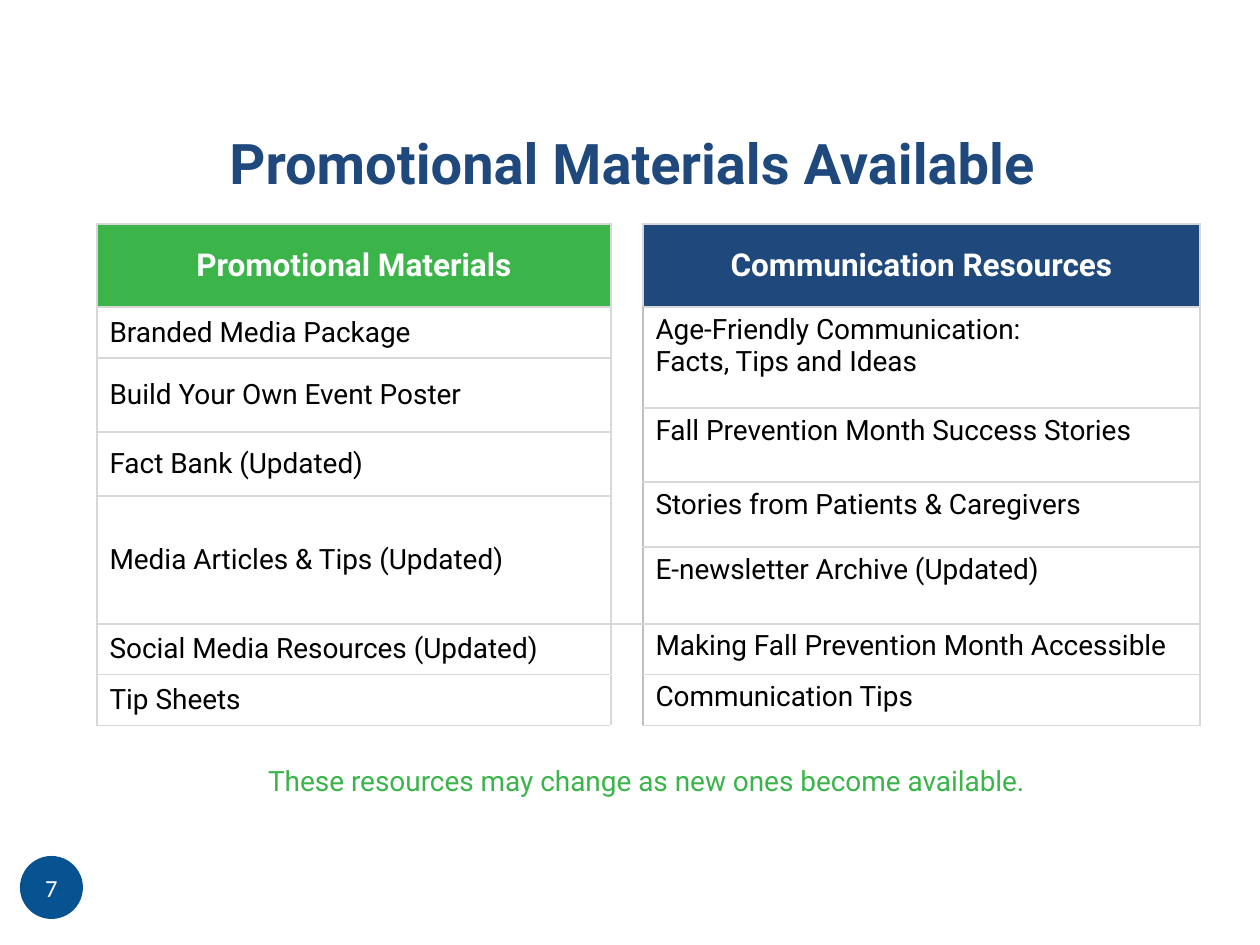
import pptx
import pptx.util
import pptx.dml.color
import pptx.enum.shapes
import pptx.enum.text
import pptx.oxml
import pptx.oxml.ns
from dataclasses import dataclass

ALIGN = pptx.enum.text.PP_ALIGN
ANCHOR = pptx.enum.text.MSO_ANCHOR
SHAPE = pptx.enum.shapes.MSO_SHAPE


@dataclass(frozen=True)
class Theme:
    font: str = "Roboto"
    num_font: str = "Calibri"
    navy: str = "1F497D"
    green: str = "3BB44A"
    badge: str = "075290"
    white: str = "FFFFFF"
    black: str = "000000"
    line: str = "D8D8D8"
    edge: str = "BFBFBF"
    title: int = 32
    head: int = 18
    body: int = 16
    num: int = 14


T = Theme()

# Column widths and row heights of the table
COLS = [514, 32, 557]
ROWS = [83, 51, 50, 24, 50, 14, 51, 77, 50, 51]

# Body cells: first row, rows spanned, lines of text
LEFT = [
    (1, 1, ["Branded Media Package"]),
    (2, 2, ["Build Your Own Event Poster"]),
    (4, 2, ["Fact Bank (Updated)"]),
    (6, 2, ["Media Articles & Tips (Updated)"]),
    (8, 1, ["Social Media Resources (Updated)"]),
    (9, 1, ["Tip Sheets"]),
]
RIGHT = [
    (1, 2, ["Age-Friendly Communication:", "Facts, Tips and Ideas"]),
    (3, 2, ["Fall Prevention Month Success Stories"]),
    (5, 2, ["Stories from Patients & Caregivers"]),
    (7, 1, ["E-newsletter Archive (Updated)"]),
    (8, 1, ["Making Fall Prevention Month Accessible"]),
    (9, 1, ["Communication Tips"]),
]


def px(n):
    return pptx.util.Emu(round(n * 914400 / 126))


def rgb(code):
    return pptx.dml.color.RGBColor.from_string(code)


def paint(fill, color):
    if color:
        fill.solid()
        fill.fore_color.rgb = rgb(color)
    else:
        fill.background()


def write(frame, lines, size, color, bold=False, align=ALIGN.LEFT, font=T.font):
    for i, line in enumerate(lines):
        para = frame.add_paragraph() if i else frame.paragraphs[0]
        para.alignment = align
        run = para.add_run()
        run.text = line
        run.font.name = font
        run.font.size = pptx.util.Pt(size)
        run.font.bold = bold
        run.font.color.rgb = rgb(color)


def add_shape(slide, kind, box, fill):
    shape = slide.shapes.add_shape(kind, *map(px, box))
    shape.shadow.inherit = False
    paint(shape.fill, fill)
    shape.line.fill.background()
    return shape.text_frame


def add_title(slide, box, text):
    frame = slide.shapes.add_textbox(*map(px, box)).text_frame
    frame.word_wrap = True
    frame.vertical_anchor = ANCHOR.BOTTOM
    write(frame, [text], T.title, T.navy, True, ALIGN.CENTER)


def add_note(slide, box, text):
    frame = add_shape(slide, SHAPE.RECTANGLE, box, T.white)
    frame.word_wrap = True
    frame.vertical_anchor = ANCHOR.TOP
    write(frame, [text], T.body, T.green, align=ALIGN.CENTER)


def add_badge(slide, box, text):
    frame = add_shape(slide, SHAPE.OVAL, box, T.badge)
    frame.margin_left = frame.margin_right = 0
    frame.margin_top = frame.margin_bottom = 0
    frame.vertical_anchor = ANCHOR.MIDDLE
    write(frame, [text], T.num, T.white, align=ALIGN.CENTER, font=T.num_font)


def set_edges(cell, edges):
    # Borders come before the fill, in the order L, R, T, B
    props = cell._tc.get_or_add_tcPr()
    sides = [s for s in "LRTB" if s in edges]
    for i, side in enumerate(sides):
        props.insert(i, pptx.oxml.parse_xml(
            f'<a:ln{side} {pptx.oxml.ns.nsdecls("a")} w="12700"><a:solidFill>'
            f'<a:srgbClr val="{edges[side]}"/></a:solidFill></a:ln{side}>'))


def make_cell(table, row, col, span, fill=None, left=T.line, right=T.line,
              top=T.line, base=T.line):
    last = row + span - 1
    for r in range(row, last + 1):
        cell = table.cell(r, col)
        paint(cell.fill, fill)
        edges = {"L": left, "R": right}
        if r == row:
            edges["T"] = top
        if r == last:
            edges["B"] = base
        set_edges(cell, edges)
    if span > 1:
        table.cell(row, col).merge(table.cell(last, col))
    return table.cell(row, col)


def add_head(table, col, text, fill):
    cell = make_cell(table, 0, col, 1, fill)
    cell.vertical_anchor = ANCHOR.MIDDLE
    write(cell.text_frame, [text], T.head, T.white, True, ALIGN.CENTER)


def add_list(table, col, items, anchor, left):
    for row, span, lines in items:
        cell = make_cell(table, row, col, span, left=left)
        cell.vertical_anchor = anchor
        write(cell.text_frame, lines, T.body, T.black)


def add_grid(slide, x, y):
    table = slide.shapes.add_table(
        len(ROWS), len(COLS), px(x), px(y), px(sum(COLS)), px(sum(ROWS))).table
    table.first_row = table.horz_banding = False
    for col, width in zip(table.columns, COLS):
        col.width = px(width)
    for row, height in zip(table.rows, ROWS):
        row.height = px(height)

    # Two lists
    add_head(table, 0, "Promotional Materials", T.green)
    add_head(table, 2, "Communication Resources", T.navy)
    add_list(table, 0, LEFT, ANCHOR.MIDDLE, T.line)
    add_list(table, 2, RIGHT, ANCHOR.TOP, T.edge)

    # White gap between the lists
    make_cell(table, 0, 1, 8, T.white, top=T.white)
    make_cell(table, 8, 1, 1, T.white, right=T.edge, base=T.white)
    make_cell(table, 9, 1, 1, T.white, right=T.edge, top=T.white, base=T.white)


def main():
    deck = pptx.Presentation()
    deck.slide_width, deck.slide_height = px(1260), px(945)
    slide = deck.slides.add_slide(deck.slide_layouts[6])
    add_badge(slide, (20, 856, 63, 63), "7")
    add_title(slide, (97, 44, 1071, 158), "Promotional Materials Available")
    add_grid(slide, 97, 224)
    add_note(slide, (95, 757, 1103, 47),
             "These resources may change as new ones become available.")
    deck.save("out.pptx")


if __name__ == "__main__":
    main()
